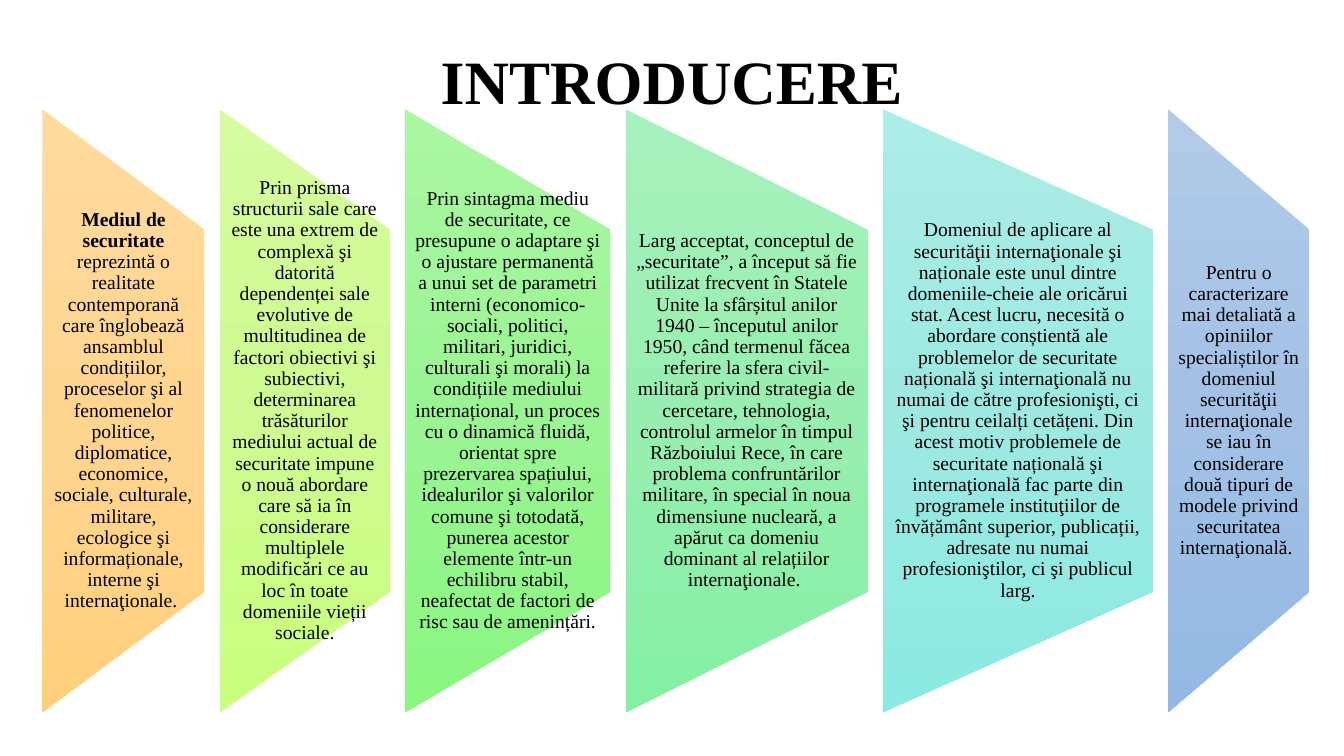
"""Build the introduction slide: a title above six tapered text panels."""
import pptx
import pptx.dml.color
import pptx.enum.shapes
import pptx.enum.text
import pptx.oxml
import pptx.oxml.ns
import pptx.util
from pptx.dml.color import RGBColor
from pptx.util import Cm

BLACK = RGBColor(0x00, 0x00, 0x00)
ORANGE = (RGBColor(0xFF, 0xDB, 0x9E), RGBColor(0xFF, 0xD5, 0x90), RGBColor(0xFF, 0xD0, 0x7C))
LIME = (RGBColor(0xD5, 0xFC, 0x9F), RGBColor(0xCE, 0xFA, 0x91), RGBColor(0xCA, 0xFF, 0x7D))
GREEN = (RGBColor(0xA9, 0xF7, 0xA2), RGBColor(0x9B, 0xF4, 0x94), RGBColor(0x89, 0xF7, 0x80))
MINT = (RGBColor(0xA6, 0xF2, 0xBC), RGBColor(0x98, 0xEE, 0xB0), RGBColor(0x84, 0xF0, 0xA4))
TURQUOISE = (RGBColor(0xAB, 0xED, 0xE7), RGBColor(0x9D, 0xE9, 0xE2), RGBColor(0x8B, 0xEA, 0xE2))
BLUE = (RGBColor(0xB1, 0xCB, 0xE9), RGBColor(0xA3, 0xC1, 0xE5), RGBColor(0x93, 0xB9, 0xE4))

PANELS_LEFT, PANEL_GAP = Cm(1.07), Cm(0.38)
PANEL_MIDDLE, PANEL_HEIGHT, TEXT_HEIGHT = Cm(10.35), Cm(15.19), Cm(9.12)

PANELS = [
    (Cm(4.09), ORANGE, "Mediul de securitate ",
     "reprezintă o realitate contemporană care înglobează ansamblul condițiilor, proceselor şi al "
     "fenomenelor politice, diplomatice, economice, sociale, culturale, militare, ecologice şi "
     "informaționale, interne şi internaţionale. "),
    (Cm(4.29), LIME, "",
     "Prin prisma structurii sale care este una extrem de complexă şi datorită dependenței sale "
     "evolutive de multitudinea de factori obiectivi şi subiectivi, determinarea trăsăturilor "
     "mediului actual de securitate impune o nouă abordare care să ia în considerare multiplele "
     "modificări ce au loc în toate domeniile vieții sociale."),
    (Cm(5.18), GREEN, "",
     "Prin sintagma mediu de securitate, ce presupune o adaptare şi o ajustare permanentă a unui "
     "set de parametri interni (economico-sociali, politici, militari, juridici, culturali şi "
     "morali) la condițiile mediului internațional, un proces cu o dinamică fluidă, orientat spre "
     "prezervarea spațiului, idealurilor şi valorilor comune şi totodată, punerea acestor elemente "
     "într-un echilibru stabil, neafectat de factori de risc sau de amenințări."),
    (Cm(6.1), MINT, "",
     "Larg acceptat, conceptul de „securitate”, a început să fie utilizat frecvent în Statele "
     "Unite la sfârșitul anilor 1940 – începutul anilor 1950, când termenul făcea referire la "
     "sfera civil-militară privind strategia de cercetare, tehnologia, controlul armelor în timpul "
     "Războiului Rece, în care problema confruntărilor militare, în special în noua dimensiune "
     "nucleară, a apărut ca domeniu dominant al relațiilor internaţionale. "),
    (Cm(6.81), TURQUOISE, "",
     "Domeniul de aplicare al securităţii internaţionale şi naționale este unul dintre "
     "domeniile-cheie ale oricărui stat. Acest lucru, necesită o abordare conștientă ale "
     "problemelor de securitate națională şi internaţională nu numai de către profesionişti, ci şi "
     "pentru ceilalți cetățeni. Din acest motiv problemele de securitate națională şi "
     "internaţională fac parte din programele instituţiilor de învățământ superior, publicații, "
     "adresate nu numai profesioniştilor, ci şi publicul larg."),
    (Cm(3.56), BLUE, "",
     "Pentru o caracterizare mai detaliată a opiniilor specialiștilor în domeniul securităţii "
     "internaţionale se iau în considerare două tipuri de modele privind securitatea "
     "internaţională. "),
]


def apply_format(target, values):
    """Set each named attribute of the target."""
    for name, value in values.items():
        setattr(target, name, value)


def add_text(page, left, top, width, height, size, spans):
    """Add a centred text box made of (text, bold) spans."""
    box = page.shapes.add_textbox(left, top, width, height)
    apply_format(box.text_frame, {
        "word_wrap": True, "vertical_anchor": pptx.enum.text.MSO_ANCHOR.MIDDLE,
        "margin_left": Cm(0.25), "margin_right": Cm(0.25), "margin_top": 0, "margin_bottom": 0})
    para = box.text_frame.paragraphs[0]
    apply_format(para, {"alignment": pptx.enum.text.PP_ALIGN.CENTER, "line_spacing": 0.9})
    for text, bold in spans:
        span = para.add_run()
        span.text = text
        apply_format(span.font, {"name": "Times New Roman", "size": pptx.util.Pt(size), "bold": bold})
        span.font.color.rgb = BLACK


def fill_gradient(shape, colours):
    """Fill a shape from top to bottom of the page with evenly spaced colours."""
    shape.fill.gradient()
    old = shape.fill._xPr.find(pptx.oxml.ns.qn("a:gradFill"))
    step = 100000 // (len(colours) - 1)
    stops = "".join(f'<a:gs pos="{index * step}"><a:srgbClr val="{colour}"/></a:gs>'
                    for index, colour in enumerate(colours))
    new = pptx.oxml.parse_xml(
        f'<a:gradFill {pptx.oxml.ns.nsdecls("a")} rotWithShape="0"><a:gsLst>{stops}</a:gsLst>'
        '<a:lin ang="5400000" scaled="0"/></a:gradFill>')
    old.getparent().replace(old, new)


def add_panel(page, left, width, colours):
    """Add a trapezoid that narrows to the right."""
    panel = page.shapes.add_shape(
        pptx.enum.shapes.MSO_SHAPE.FLOWCHART_MANUAL_OPERATION,
        left + (width - PANEL_HEIGHT) // 2, PANEL_MIDDLE - width // 2, PANEL_HEIGHT, width)
    panel.rotation = 270
    panel.shadow.inherit = False
    panel.line.fill.background()
    fill_gradient(panel, colours)


def main():
    """Build and save the deck."""
    deck = pptx.Presentation()
    apply_format(deck, {"slide_width": Cm(33.87), "slide_height": Cm(19.05)})
    page = deck.slides.add_slide(deck.slide_layouts[6])
    add_text(page, Cm(2.33), Cm(1.01), Cm(29.21), Cm(2.24), 44, [("INTRODUCERE", True)])
    left = PANELS_LEFT
    for width, colours, lead, body in PANELS:
        add_panel(page, left, width, colours)
        spans = [(text, bold) for text, bold in ((lead, True), (body, False)) if text]
        add_text(page, left, PANEL_MIDDLE - TEXT_HEIGHT // 2, width, TEXT_HEIGHT, 14, spans)
        left += width + PANEL_GAP
    deck.save("out.pptx")


if __name__ == "__main__":
    main()
